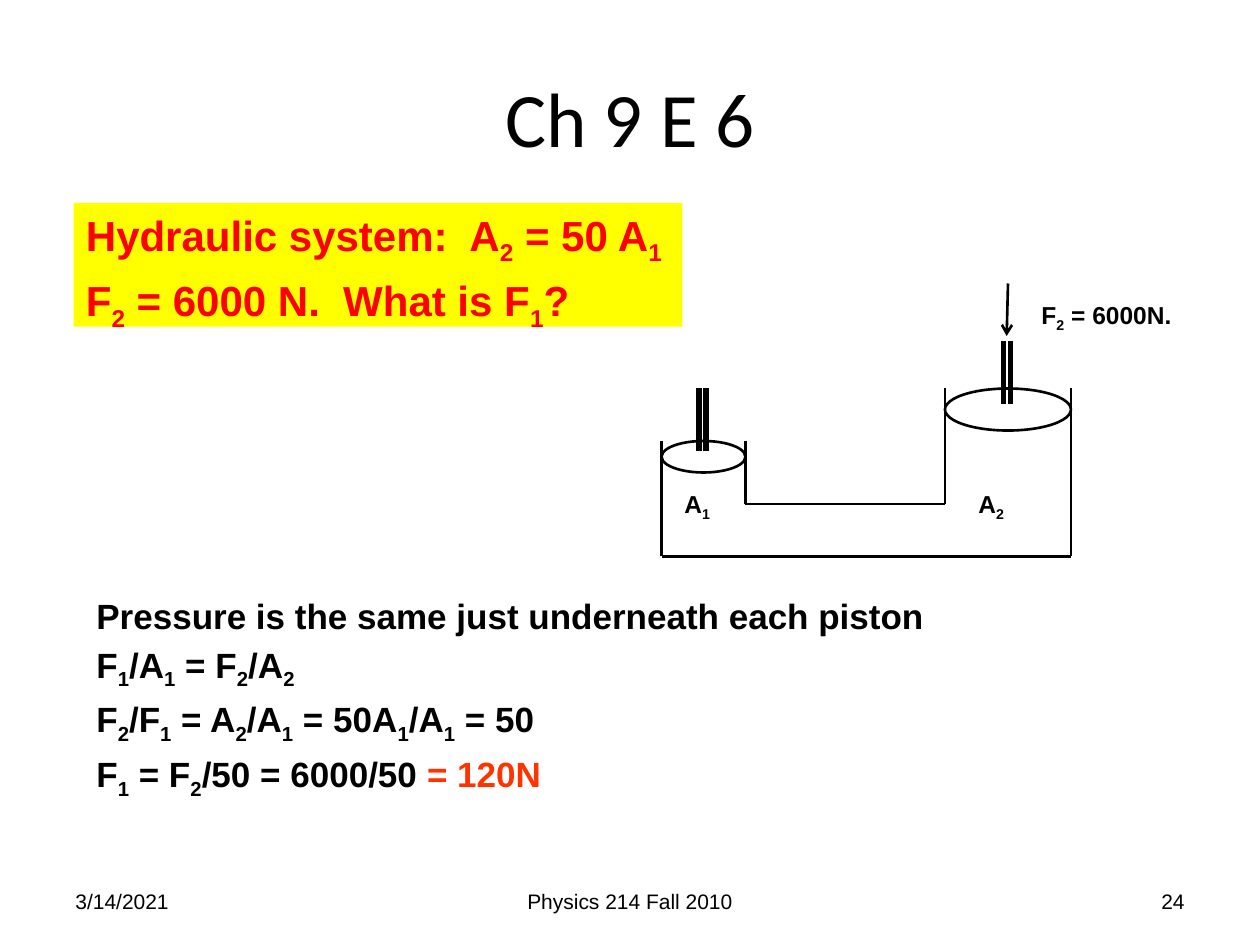
from lxml import etree
from pptx import Presentation
from pptx.dml.color import RGBColor
from pptx.enum.shapes import MSO_CONNECTOR, MSO_SHAPE
from pptx.enum.text import MSO_ANCHOR, PP_ALIGN
from pptx.oxml.ns import qn
from pptx.util import Pt

LEFT, CENTER, RIGHT = PP_ALIGN.LEFT, PP_ALIGN.CENTER, PP_ALIGN.RIGHT
TOP, MIDDLE = MSO_ANCHOR.TOP, MSO_ANCHOR.MIDDLE
BLACK = RGBColor(0x00, 0x00, 0x00)
RED = RGBColor(0xFF, 0x00, 0x00)
ORANGE = RGBColor(0xFF, 0x33, 0x00)
YELLOW = RGBColor(0xFF, 0xFF, 0x00)

# Content: a paragraph is a list of (text, colour); "_" lowers the next character
TITLE = [[("Ch 9 E 6", BLACK)]]
QUESTION = [
    [("Hydraulic system:  A_2 = 50 A_1", RED)],
    [("F_2 = 6000 N.  What is F_1?", RED)],
]
SOLUTION = [
    [("Pressure is the same just underneath each piston", BLACK)],
    [("F_1/A_1 = F_2/A_2", BLACK)],
    [("F_2/F_1 = A_2/A_1 = 50A_1/A_1 = 50", BLACK)],
    [("F_1 = F_2/50 = 6000/50 ", BLACK), ("= 120N", ORANGE)],
]
FOOTER = [  # left, width, text, alignment
    (36, 168, "3/14/2021", LEFT),
    (246, 228, "Physics 214 Fall 2010", CENTER),
    (516, 168, "24", RIGHT),
]
LABELS = [  # left, top, width, text
    (384, 276, 36, "A_1"),
    (552, 276, 36, "A_2"),
    (588, 168, 90, "F_2 = 6000N."),
]

# Diagram: the two cylinders and the pipe that joins them
PIPE_TOP, PIPE_BOTTOM = 288, 318
CYLINDERS = [  # left, right, rim, ellipse height, rod centre, rod top
    (378, 426, 252, 18, 401.5, 222),
    (540, 612, 222, 24, 575.25, 195),
]
ROD_HEIGHT, ROD_GAP = 36, 4

deck = Presentation()
deck.slide_width, deck.slide_height = Pt(720), Pt(540)
page = deck.slides.add_slide(deck.slide_layouts[6])


def add_text(left, top, width, height, paragraphs, size, align=LEFT, anchor=TOP,
             font="Arial", bold=False, spacing=0.0, wrap=True):
    box = page.shapes.add_textbox(Pt(left), Pt(top), Pt(width), Pt(height))
    frame = box.text_frame
    frame.word_wrap = wrap
    frame.vertical_anchor = anchor
    for index, pieces in enumerate(paragraphs):
        para = frame.paragraphs[0] if index == 0 else frame.add_paragraph()
        para.alignment = align
        para.space_before = Pt(size * spacing)
        for text, color in pieces:
            first, *rest = text.split("_")
            spans = [(first, False)]
            for part in rest:
                spans += [(part[0], True), (part[1:], False)]
            for words, lowered in spans:
                if not words:
                    continue
                span = para.add_run()
                span.text = words
                span.font.name, span.font.size = font, Pt(size)
                span.font.bold = bold
                span.font.color.rgb = color
                if lowered:
                    span._r.get_or_add_rPr().set("baseline", "-25000")
    return box


def add_line(x1, y1, x2, y2, width=1.5, arrow=False):
    line = page.shapes.add_connector(
        MSO_CONNECTOR.STRAIGHT, Pt(x1), Pt(y1), Pt(x2), Pt(y2))
    line.line.color.rgb = BLACK
    line.line.width = Pt(width)
    if arrow:
        etree.SubElement(line.line._get_or_add_ln(), qn("a:tailEnd"), type="arrow")
    etree.SubElement(line._element.spPr, qn("a:effectLst"))


# Footer and title
for left, width, text, align in FOOTER:
    add_text(left, 500.5, width, 28.75, [[(text, BLACK)]], 12, align, MIDDLE)
add_text(36, 21.6, 648, 90, TITLE, 44, CENTER, MIDDLE, "Calibri")

# Question and solution
question = add_text(42, 116, 348, 70.75, QUESTION, 24, bold=True, spacing=0.2, wrap=False)
question.fill.solid()
question.fill.fore_color.rgb = YELLOW
add_text(48, 336, 618, 117.5, SOLUTION, 20, bold=True, spacing=0.2)

# Vessel walls: outer walls reach the bottom, inner walls the top of the pipe
(small_left, small_right, small_rim, *_), (big_left, big_right, big_rim, *_) = CYLINDERS
add_line(small_left, PIPE_BOTTOM, big_right, PIPE_BOTTOM)
add_line(small_right, PIPE_TOP, big_left, PIPE_TOP)
for x, rim, bottom in [
    (small_left, small_rim, PIPE_BOTTOM), (small_right, small_rim, PIPE_TOP),
    (big_left, big_rim, PIPE_TOP), (big_right, big_rim, PIPE_BOTTOM),
]:
    add_line(x, bottom, x, rim)

# Pistons with their double rods
for left, right, rim, height, rod, rod_top in CYLINDERS:
    piston = page.shapes.add_shape(
        MSO_SHAPE.OVAL, Pt(left), Pt(rim), Pt(right - left), Pt(height))
    piston.shadow.inherit = False
    piston.fill.background()
    piston.line.color.rgb = BLACK
    piston.line.width = Pt(1.5)
    for x in (rod - ROD_GAP / 2, rod + ROD_GAP / 2):
        add_line(x, rod_top + ROD_HEIGHT, x, rod_top, width=3)

# Force arrow and labels
add_line(576, 162, 575.25, 192, arrow=True)
for left, top, width, text in LABELS:
    add_text(left, top, width, 24, [[(text, BLACK)]], 14, bold=True, spacing=0.5)

deck.save("out.pptx")
